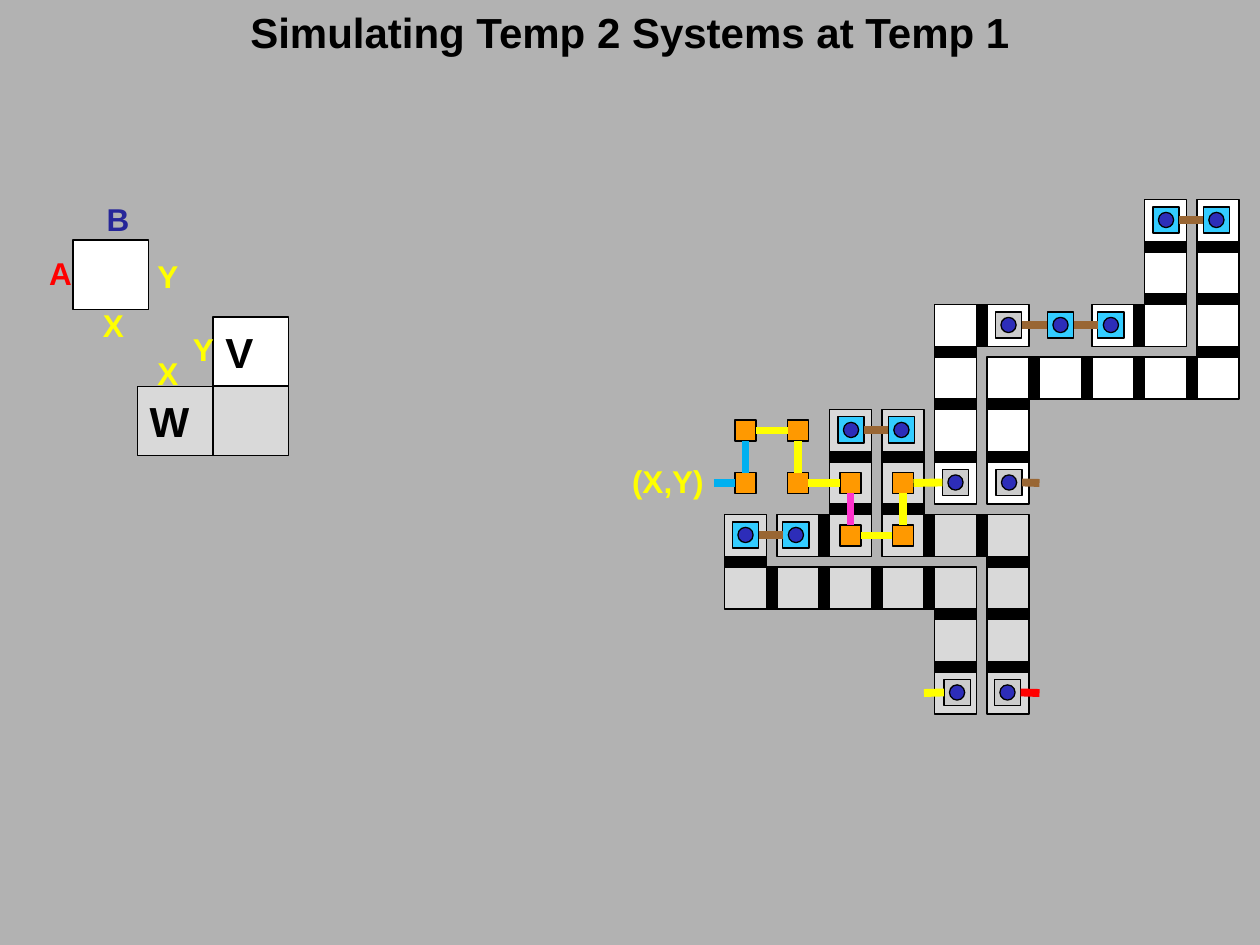
import itertools
from dataclasses import dataclass
from typing import NamedTuple, Union

import pptx
import pptx.dml.color
import pptx.enum.shapes
import pptx.enum.text
import pptx.oxml
import pptx.util
from pptx.shapes.autoshape import Shape
from pptx.slide import Slide
from pptx.text.text import TextFrame

RECT = pptx.enum.shapes.MSO_SHAPE.RECTANGLE
OVAL = pptx.enum.shapes.MSO_SHAPE.OVAL
TOP, LEFT, BOTTOM, RIGHT = range(4)
STEPS = {"U": (0, -1), "D": (0, 1), "L": (-1, 0), "R": (1, 0)}
SIDES = {"U": (TOP, BOTTOM), "D": (BOTTOM, TOP), "L": (LEFT, RIGHT), "R": (RIGHT, LEFT)}
BLACK, WHITE, GREY, SILVER = "000000", "FFFFFF", "D9D9D9", "CCCCCC"
CYAN, NAVY, ORANGE, BROWN = "33CCFF", "2D2DB9", "FF9900", "996633"
YELLOW, RED, PINK, BLUE = "FFFF00", "FF0000", "FF33CC", "00B0F0"


@dataclass(frozen=True)
class Grid:
    """Cell pitch in inches, counted from the centre of cell (0, 0)."""
    x: float
    y: float
    col: float
    row: float

    def point(self, col: float, row: float) -> tuple[int, int]:
        return (pptx.util.Inches(self.x + col * self.col),
                pptx.util.Inches(self.y + row * self.row))

    def frame(self, col: float, row: float, cols: float, rows: float) -> tuple[int, ...]:
        return (*self.point(col - cols / 2, row - rows / 2),
                pptx.util.Inches(cols * self.col), pptx.util.Inches(rows * self.row))


ASSEMBLY = Grid(5 + 11 / 12, 1.75, 5 / 12, 5 / 12)
LEGEND = Grid(1.39, 2.79, 0.6, 0.55)


class Chain(NamedTuple):
    col: int
    row: int
    moves: str
    fill: str


class Marker(NamedTuple):
    col: float
    row: int
    fill: str


class Letter(NamedTuple):
    text: str
    col: float
    row: float
    color: str = YELLOW
    cols: float = 0.48


class Joint(NamedTuple):
    shape: Shape
    side: int


class Spot(NamedTuple):
    col: float
    row: float


CHAINS = [Chain(8, 0, "DDL", WHITE), Chain(5, 2, "LDDD", WHITE),
          Chain(5, 5, "UURRRRUUU", WHITE), Chain(1, 6, "RUU", GREY),
          Chain(3, 4, "DDRRDDD", GREY), Chain(4, 9, "UULLLLU", GREY)]
MARKERS = {
    "upper left": Marker(8.01, 0, CYAN), "upper right": Marker(8.97, 0, CYAN),
    "gap left": Marker(5.01, 2, SILVER), "gap middle": Marker(6, 2, CYAN),
    "gap right": Marker(6.96, 2, CYAN),
    "white input": Marker(4, 5, SILVER), "white output": Marker(5.02, 5, SILVER),
    "grey left": Marker(2.01, 4, CYAN), "grey right": Marker(2.97, 4, CYAN),
    "lower left": Marker(0, 6, CYAN), "lower right": Marker(0.96, 6, CYAN),
    "grey input": Marker(4.03, 9, SILVER), "grey output": Marker(4.99, 9, SILVER)}
MARKER_PAIRS = [("upper left", "upper right"), ("gap left", "gap middle"),
                ("gap middle", "gap right"), ("grey left", "grey right"),
                ("lower left", "lower right")]
PROBE_START = Spot(0, 5)
PROBE = [("U", BLUE), ("R", YELLOW), ("D", YELLOW), ("R", YELLOW),
         ("D", PINK), ("R", YELLOW), ("U", YELLOW)]
LETTERS = [Letter("Y", -0.16, -1.09), Letter("X", -0.88, -0.38),
           Letter("A", -1.59, -1.13, RED), Letter("B", -0.83, -1.91, "262699"),
           Letter("Y", 0.31, -0.04), Letter("X", -0.16, 0.31),
           Letter("(X,Y)", 6.54, 1.87, YELLOW, 1.32)]
LEGEND_TILES = [("", -0.85, -1.11, WHITE), ("W", 0, 1, GREY),
                ("", 1, 1, GREY), ("V", 1, 0, WHITE)]


def rgb(color: str) -> pptx.dml.color.RGBColor:
    return pptx.dml.color.RGBColor.from_string(color)


def write(tf: TextFrame, text: str, size: float, color: str,
          align=pptx.enum.text.PP_ALIGN.LEFT) -> None:
    p = tf.paragraphs[0]
    p.alignment = align
    r = p.add_run()
    r.text = text
    r.font.name, r.font.size, r.font.bold = "Arial", pptx.util.Pt(size), True
    r.font.color.rgb = rgb(color)


def box(s: Slide, grid: Grid, col: float, row: float, cols: float, rows: float,
        fill: str, preset=RECT) -> Shape:
    """Draw a black-edged shape centred on a grid position."""
    sp = s.shapes.add_shape(preset, *grid.frame(col, row, cols, rows))
    sp.shadow.inherit = False
    sp.fill.solid()
    sp.fill.fore_color.rgb = rgb(fill)
    sp.line.color.rgb = rgb(BLACK)
    sp.line.width = pptx.util.Pt(0.75)
    return sp


def draw_chain(s: Slide, chain: Chain) -> None:
    col, row = chain.col, chain.row
    box(s, ASSEMBLY, col, row, 0.8, 0.8, chain.fill)
    for move in chain.moves:
        dx, dy = STEPS[move]
        box(s, ASSEMBLY, col + dx / 2, row + dy / 2,
            0.2 if dx else 0.8, 0.2 if dy else 0.8, BLACK)
        col, row = col + dx, row + dy
        box(s, ASSEMBLY, col, row, 0.8, 0.8, chain.fill)


def draw_marker(s: Slide, marker: Marker) -> Shape:
    row = marker.row - 0.01
    sp = box(s, ASSEMBLY, marker.col, row, 0.5, 0.5, marker.fill)
    box(s, ASSEMBLY, marker.col, row, 0.29, 0.29, NAVY, OVAL)
    return sp


def link(s: Slide, start: Union[Joint, Spot], end: Union[Joint, Spot], color: str) -> None:
    points = [ASSEMBLY.point(*e) if isinstance(e, Spot) else (0, 0) for e in (start, end)]
    c = s.shapes.add_connector(pptx.enum.shapes.MSO_CONNECTOR.STRAIGHT, *points[0], *points[1])
    if isinstance(start, Joint):
        c.begin_connect(*start)
    if isinstance(end, Joint):
        c.end_connect(*end)
    c.line.color.rgb = rgb(color)
    c.line.width = pptx.util.Pt(4.5)
    c._element.spPr.append(pptx.oxml.parse_xml(
        '<a:effectLst xmlns:a="http://schemas.openxmlformats.org/drawingml/2006/main"/>'))


def draw_probe(s: Slide, target: Shape) -> None:
    """Draw the orange path from the (X,Y) label to the target marker."""
    spots = itertools.accumulate(
        (STEPS[move] for move, _ in PROBE),
        lambda a, b: (a[0] + b[0], a[1] + b[1]), initial=PROBE_START)
    blocks = [box(s, ASSEMBLY, *spot, 0.4, 0.4, ORANGE) for spot in spots]
    link(s, Spot(-0.6, 5), Joint(blocks[0], LEFT), BLUE)
    for (a, b), (move, color) in zip(itertools.pairwise(blocks), PROBE):
        out, into = SIDES[move]
        link(s, Joint(a, out), Joint(b, into), color)
    link(s, Joint(blocks[-1], RIGHT), Joint(target, LEFT), YELLOW)


def draw_legend(s: Slide) -> None:
    for text, col, row, fill in LEGEND_TILES:
        sp = box(s, LEGEND, col, row, 1, 1, fill)
        if text:
            write(sp.text_frame, text, 24, BLACK)
    for letter in LETTERS:
        sp = s.shapes.add_textbox(*LEGEND.frame(letter.col, letter.row, letter.cols, 0.73))
        tf = sp.text_frame
        tf.word_wrap = True
        tf.margin_right = 0
        write(tf, letter.text, 18, letter.color)


def main() -> None:
    prs = pptx.Presentation()
    prs.slide_width, prs.slide_height = pptx.util.Inches(10), pptx.util.Inches(7.5)
    s = prs.slides.add_slide(prs.slide_layouts[5])
    s.background.fill.solid()
    s.background.fill.fore_color.rgb = rgb("B2B2B2")

    title = s.shapes.title
    title.left, title.top = 0, 0
    title.width, title.height = prs.slide_width, prs.slide_height // 15
    write(title.text_frame, "Simulating Temp 2 Systems at Temp 1", 24, BLACK,
          pptx.enum.text.PP_ALIGN.CENTER)

    for chain in CHAINS:
        draw_chain(s, chain)
    markers = {name: draw_marker(s, marker) for name, marker in MARKERS.items()}
    for a, b in MARKER_PAIRS:
        link(s, Joint(markers[a], RIGHT), Joint(markers[b], LEFT), BROWN)
    link(s, Joint(markers["white output"], RIGHT), Spot(5.6, 5), BROWN)
    link(s, Spot(3.4, 9), Joint(markers["grey input"], LEFT), YELLOW)
    link(s, Joint(markers["grey output"], RIGHT), Spot(5.6, 9), RED)
    draw_probe(s, markers["white input"])
    draw_legend(s)
    prs.save("out.pptx")


if __name__ == "__main__":
    main()
